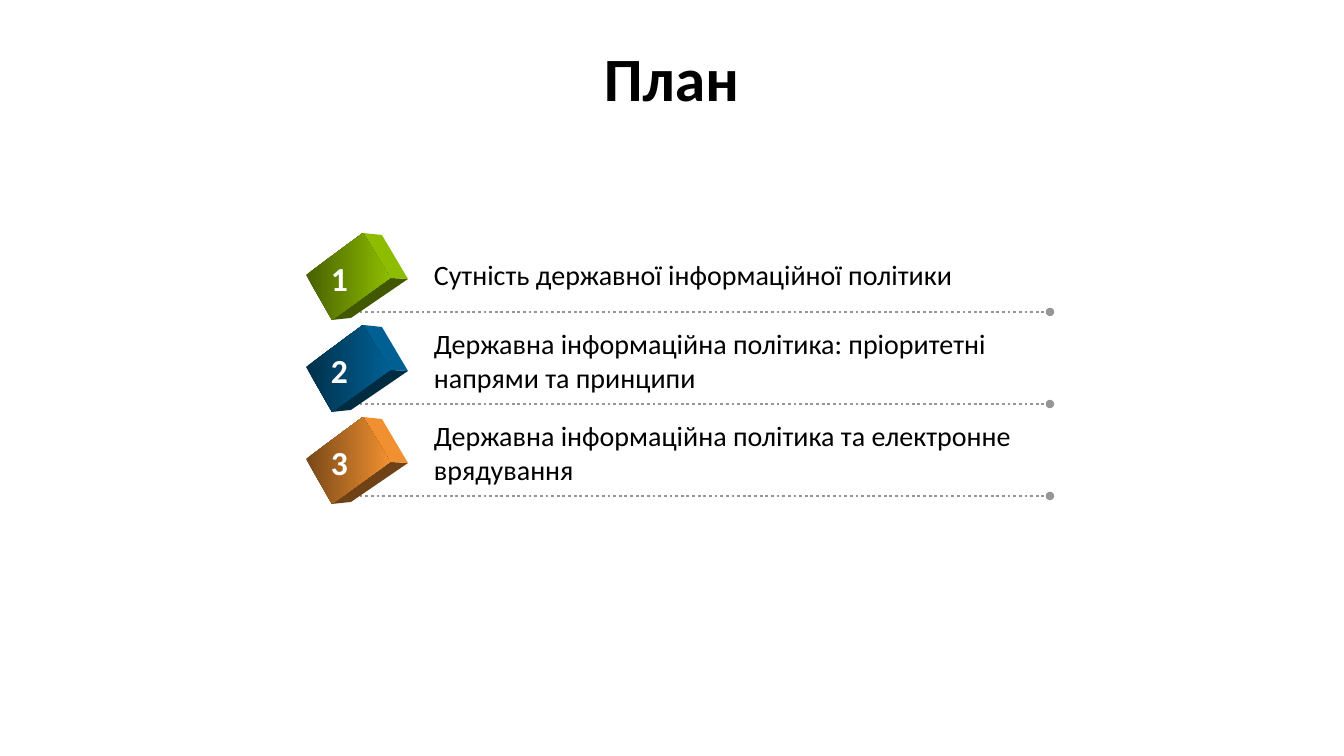
from lxml import etree
from pptx import Presentation
from pptx.dml.color import RGBColor
from pptx.enum.dml import MSO_LINE
from pptx.enum.shapes import MSO_CONNECTOR
from pptx.enum.text import MSO_ANCHOR, PP_ALIGN
from pptx.oxml.ns import qn
from pptx.util import Pt

STRAIGHT = MSO_CONNECTOR.STRAIGHT
DOTTED = MSO_LINE.ROUND_DOT
MIDDLE, TOP = MSO_ANCHOR.MIDDLE, MSO_ANCHOR.TOP
CENTER, LEFT = PP_ALIGN.CENTER, PP_ALIGN.LEFT

EMU_PER_PX = 914400 / 100.8
COLORS = {
    "text": "000000", "number": "FFFFFF", "rule": "969696",
    "green": "8DBC00", "green_dark": "486000", "green_shade": "425800",
    "blue": "006094", "blue_dark": "00304A", "blue_shade": "002C42",
    "orange": "F09030", "orange_dark": "784818", "orange_shade": "6E4216",
}
FORMATS = {
    "title": {"name": "Calibri", "size": Pt(44), "bold": True},
    "number": {"name": "Calibri", "size": Pt(24), "bold": True},
    "item": {"name": "Calibri", "size": Pt(20), "bold": False},
}
FRONT_FACE = [(306, -37), (363, -79), (390, -34), (332, 8)]
SIDE_FACE = [(363, -79), (382, -77), (408, -33), (390, -34)]
BOTTOM_FACE = [(332, 8), (390, -34), (408, -33), (351, 6)]
FIRST_RULE, ROW_PITCH = 312, 92
ITEMS = [
    ("Сутність державної інформаційної політики", "green", -59, 44),
    ("Державна інформаційна політика: пріоритетні напрями та принципи",
     "blue", -82, 78),
    ("Державна інформаційна політика та електронне врядування",
     "orange", -82, 78),
]


def px(value):
    """Convert pixels to EMU."""
    return round(value * EMU_PER_PX)


def color(name):
    """Return the named colour."""
    return RGBColor.from_string(COLORS[name])


def add_text(slide, box, text, style, ink, align=LEFT, anchor=TOP):
    """Add a one-paragraph text box and return its paragraph."""
    frame = slide.shapes.add_textbox(*map(px, box)).text_frame
    frame.word_wrap = True
    frame.vertical_anchor = anchor
    paragraph = frame.paragraphs[0]
    paragraph.text = text
    paragraph.alignment = align
    font = paragraph.runs[0].font
    for name, value in FORMATS[style].items():
        setattr(font, name, value)
    font.color.rgb = color(ink)
    return paragraph


def add_rule(slide, y):
    """Add a dotted rule that ends in a round dot."""
    rule = slide.shapes.add_connector(STRAIGHT, *map(px, (354, y, 1050, y)))
    rule.line.color.rgb = color("rule")
    rule.line.width = Pt(2)
    rule.line.dash_style = DOTTED
    properties = rule._element.spPr
    etree.SubElement(properties.find(qn("a:ln")), qn("a:tailEnd"), type="oval")
    etree.SubElement(properties, qn("a:effectLst"))


def add_face(slide, points, y, *fills):
    """Add one face of a block, solid or with a gradient of two colours."""
    corners = [(px(x), px(y + offset)) for x, offset in points]
    builder = slide.shapes.build_freeform(*corners[0])
    builder.add_line_segments(corners[1:], close=True)
    face = builder.convert_to_shape()
    face.shadow.inherit = False
    face.line.fill.background()
    if len(fills) == 1:
        face.fill.solid()
        face.fill.fore_color.rgb = color(fills[0])
        return
    face.fill.gradient()
    face.fill.gradient_angle = 0
    for stop, name in zip(face.fill.gradient_stops, fills):
        stop.color.rgb = color(name)


def add_block(slide, y, hue):
    """Add a tilted three-sided block above a rule."""
    add_face(slide, BOTTOM_FACE, y, f"{hue}_shade")
    add_face(slide, SIDE_FACE, y, hue)
    add_face(slide, FRONT_FACE, y, f"{hue}_dark", hue)


def add_item(slide, number, text, hue, text_offset, text_height):
    """Add a numbered row of the plan."""
    y = FIRST_RULE + (number - 1) * ROW_PITCH
    add_rule(slide, y)
    add_block(slide, y, hue)
    add_text(slide, (321, y - 59, 51, 50), str(number), "number", "number")
    add_text(slide, (424, y + text_offset, 651, text_height), text,
             "item", "text")


def main():
    """Build the plan slide and save it."""
    presentation = Presentation()
    presentation.slide_width = px(1344)
    presentation.slide_height = px(756)
    slide = presentation.slides.add_slide(presentation.slide_layouts[6])
    title = add_text(slide, (92, 40, 1159, 84), "План", "title", "text",
                     CENTER, MIDDLE)
    title.line_spacing = 0.9
    for number, item in enumerate(ITEMS, 1):
        add_item(slide, number, *item)
    presentation.save("out.pptx")


if __name__ == "__main__":
    main()
